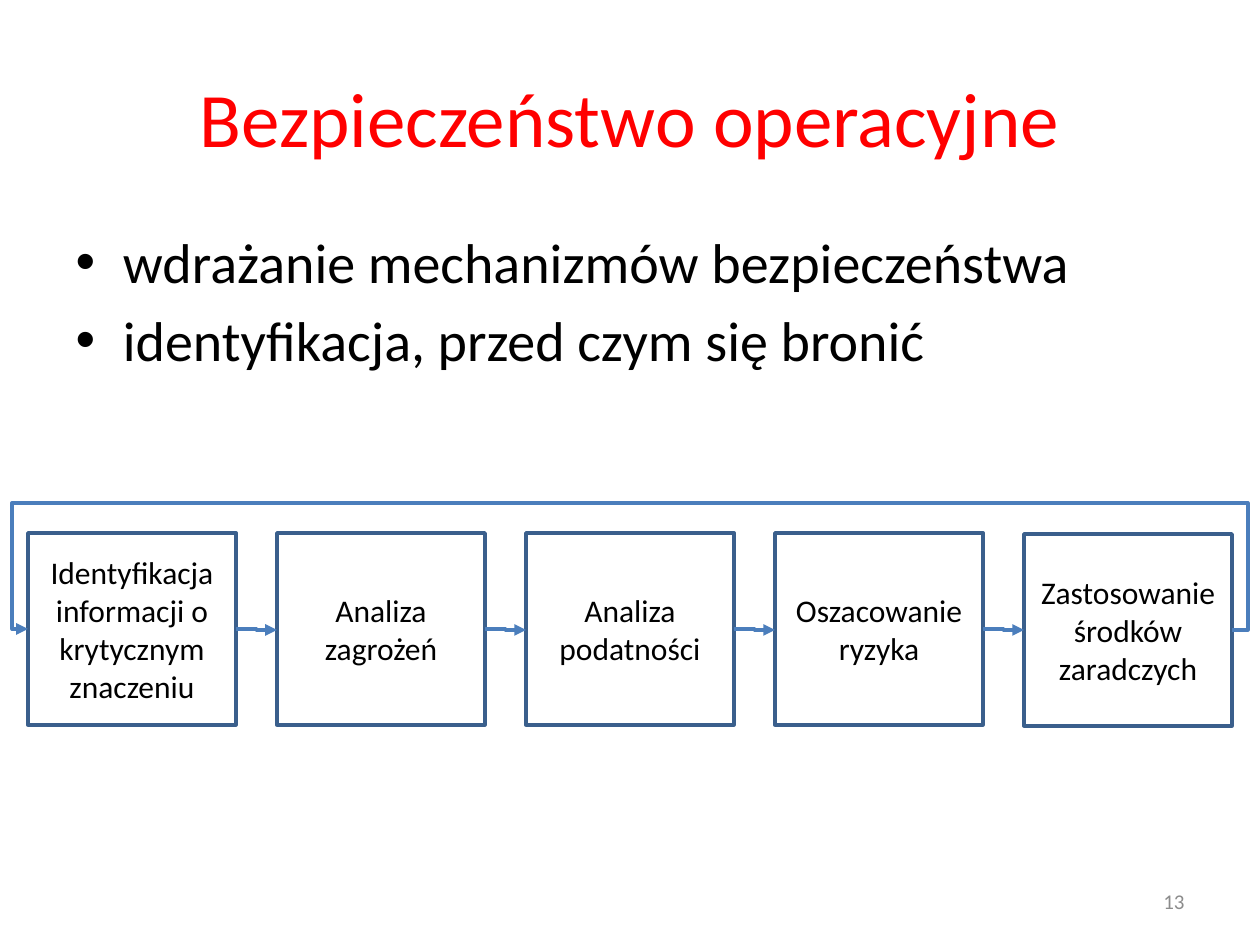
from lxml.etree import SubElement as Sub
from pptx import Presentation
from pptx.dml.color import RGBColor as Rgb
from pptx.enum.shapes import MSO_CONNECTOR as Conn, MSO_SHAPE as Kind
from pptx.enum.text import MSO_ANCHOR as Anchor, PP_ALIGN as Align
from pptx.oxml.ns import qn
from pptx.util import Emu, Pt

SCALE = 914400 / 126
HUES = {"title": "FF0000", "text": "000000", "page": "8C8C8C",
        "edge": "3A5F8C", "arrow": "4B7EBC"}
STEPS = ["Identyfikacja informacji o krytycznym znaczeniu", "Analiza zagrożeń",
         "Analiza podatności", "Oszacowanie ryzyka", "Zastosowanie środków zaradczych"]
POINTS = ["wdrażanie mechanizmów bezpieczeństwa", "identyfikacja, przed czym się bronić"]


def px(*nums):
    return [Emu(round(n * SCALE)) for n in nums]


def hue(name):
    return Rgb.from_string(HUES[name])


def assign(item, vals):
    for key, val in vals.items():
        setattr(item, key, val)


def place(shape, box):
    assign(shape, dict(zip(("left", "top", "width", "height"), px(*box))))


def write(shape, lines, size, tone, align=None, anchor=None):
    frame = shape.text_frame
    assign(frame, {"text": "\n".join(lines), "word_wrap": True, "vertical_anchor": anchor})
    for para in frame.paragraphs:
        para.alignment = align
        assign(para.runs[0].font, {"name": "Calibri", "size": Pt(size)})
        para.runs[0].font.color.rgb = hue(tone)


def head(slide, box):
    title = slide.shapes.title
    place(title, box)
    write(title, ["Bezpieczeństwo operacyjne"], 44, "title", Align.CENTER, Anchor.MIDDLE)


def body(slide, box):
    points = slide.placeholders[1]
    place(points, box)
    write(points, POINTS, 32, "text")


def page(slide, box):
    note = slide.shapes.add_textbox(*px(*box))
    write(note, ["13"], 12, "page", Align.RIGHT, Anchor.MIDDLE)


def step(slide, box, text):
    rect = slide.shapes.add_shape(Kind.RECTANGLE, *px(*box))
    rect.shadow.inherit = False
    rect.fill.background()
    rect.line.color.rgb = hue("edge")
    rect.line.width = Pt(2)
    write(rect, [text], 18, "text", Align.CENTER, Anchor.MIDDLE)


def arrow(slide, start, end):
    link = slide.shapes.add_connector(Conn.ELBOW, *px(*start, *end))
    link.line.color.rgb = hue("arrow")
    link.line.width = Pt(2.25)
    Sub(link.line._get_or_add_ln(), qn("a:tailEnd"), type="triangle")
    Sub(link._element.spPr, qn("a:effectLst"))
    return link


def loop(slide, start, end, rise, out):
    link = arrow(slide, start, end)
    wide, tall = start[0] - end[0], start[1] - end[1]
    geom = link._element.spPr.find(qn("a:prstGeom"))
    geom.set("prst", "bentConnector5")
    guides = geom.find(qn("a:avLst"))
    if guides is None:
        guides = Sub(geom, qn("a:avLst"))
    for num, part in enumerate((-out / wide, rise / tall, 1 + out / wide), 1):
        Sub(guides, qn("a:gd"), name=f"adj{num}", fmla=f"val {round(part * 100000)}")


def flow(slide, box):
    left, top, wide, tall = box
    side, drop = 208, 1
    high = tall - drop
    pitch = (wide - side) // (len(STEPS) - 1)
    mid = top + high // 2
    last = len(STEPS) - 1
    for num, text in enumerate(STEPS):
        shift = drop if num == last else 0
        step(slide, (left + num * pitch, top + shift, side, high), text)
    for num in range(last):
        x = left + num * pitch
        arrow(slide, (x + side, mid), (x + pitch, mid + drop))
    loop(slide, (left + wide, mid + drop), (left, mid), 128, 16)


def main():
    deck = Presentation()
    deck.slide_width, deck.slide_height = px(1260, 945)
    slide = deck.slides.add_slide(deck.slide_layouts[1])
    head(slide, (63, 38, 1134, 158))
    body(slide, (63, 221, 1134, 191))
    page(slide, (903, 876, 294, 50))
    flow(slide, (28, 533, 1204, 193))
    deck.save("out.pptx")


if __name__ == "__main__":
    main()
